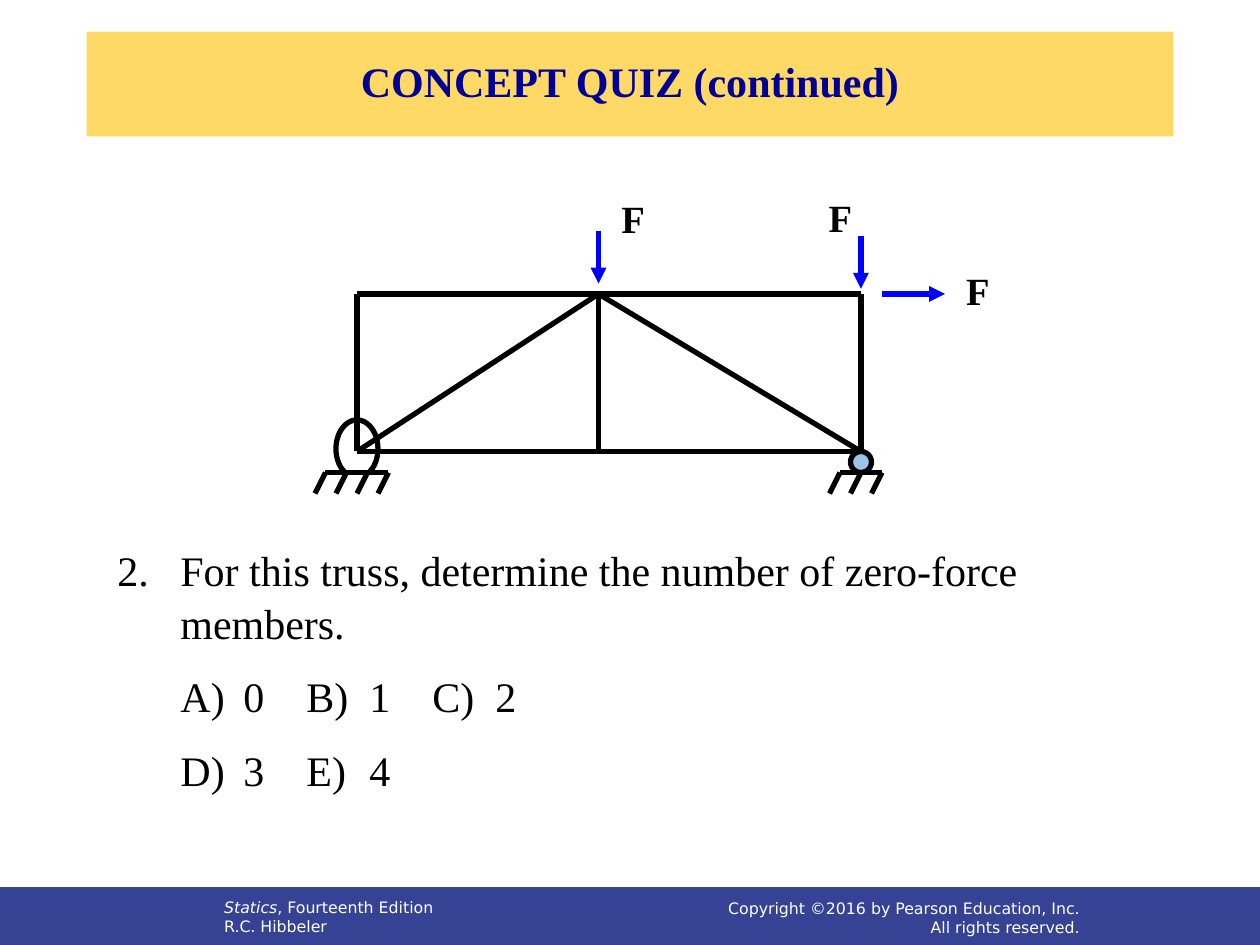
from typing import NamedTuple

from lxml.etree import SubElement
from pptx import Presentation
from pptx.dml.color import RGBColor
from pptx.enum.shapes import MSO_CONNECTOR, MSO_SHAPE
from pptx.enum.text import MSO_ANCHOR, PP_ALIGN
from pptx.oxml.ns import qn
from pptx.util import Pt

COLORS = {
    "black": "000000",
    "white": "FFFFFF",
    "force": "0000FF",
    "roller": "9DC3E6",
    "title": "000096",
    "title_band": "FFD966",
    "footer_band": "364395",
}
SERIF = "Times New Roman"
SANS = "DejaVu Sans"
LINE_WIDTH = 3
LEFT, MIDDLE, RIGHT = 204, 342, 492
TOP, BOTTOM, GROUND = 168, 258, 270
HATCH_GAP = 12


class Box(NamedTuple):
    left: float
    top: float
    width: float
    height: float


class Line(NamedTuple):
    x1: float
    y1: float
    x2: float
    y2: float


class Force(NamedTuple):
    arrow: Line
    label: Box


class Support(NamedTuple):
    left: float
    right: float


class Answers(NamedTuple):
    text: str


MEMBERS = [
    Line(LEFT, TOP, RIGHT, TOP),
    Line(LEFT, BOTTOM, RIGHT, BOTTOM),
    Line(LEFT, BOTTOM, LEFT, TOP),
    Line(MIDDLE, TOP, MIDDLE, BOTTOM),
    Line(RIGHT, TOP, RIGHT, BOTTOM + 6),
    Line(MIDDLE, TOP, LEFT, BOTTOM),
    Line(MIDDLE, TOP, RIGHT, BOTTOM),
]
FORCES = [
    Force(Line(MIDDLE, 132, MIDDLE, 162), Box(348, 108, 28, 34)),
    Force(Line(RIGHT, 135, RIGHT, 165), Box(466.5, 107.5, 28, 34)),
    Force(Line(504, TOP, 540, TOP), Box(545, 149, 28, 34)),
]
SUPPORTS = [Support(186, 222), Support(480, 504)]
ANSWERS = [Answers("A)\t0\tB)\t1\tC)\t2"), Answers("D)\t3\tE)\t4")]
ANSWER_TABS = [72, 216, 258, 432, 474]


def color(name: str) -> RGBColor:
    return RGBColor.from_string(COLORS[name])


def add_preset(slide, kind, box: Box, fill=None, line=None, width=LINE_WIDTH):
    shape = slide.shapes.add_shape(kind, *map(Pt, box))
    shape.shadow.inherit = False
    if fill:
        shape.fill.solid()
        shape.fill.fore_color.rgb = color(fill)
    else:
        shape.fill.background()
    if line:
        shape.line.color.rgb = color(line)
        shape.line.width = Pt(width)
    else:
        shape.line.fill.background()
    return shape


def add_line(slide, line: Line, line_color: str = "black", arrow: bool = False) -> None:
    connector = slide.shapes.add_connector(MSO_CONNECTOR.STRAIGHT, *map(Pt, line))
    connector.line.color.rgb = color(line_color)
    connector.line.width = Pt(LINE_WIDTH)
    if arrow:
        SubElement(connector.line._get_or_add_ln(), qn("a:tailEnd"), type="triangle")
    SubElement(connector._element.spPr, qn("a:effectLst"))


def add_text_frame(slide, box: Box, wrap: bool = True):
    frame = slide.shapes.add_textbox(*map(Pt, box)).text_frame
    frame.word_wrap = wrap
    return frame


def style(paragraph, size, name: str, font_color: str, bold: bool = False) -> None:
    font = paragraph.font
    font.size = Pt(size)
    font.name = name
    font.bold = bold
    font.color.rgb = color(font_color)


def add_support(slide, support: Support) -> None:
    add_line(slide, Line(support.left, GROUND, support.right, GROUND))
    for x in range(support.left, support.right + 1, HATCH_GAP):
        add_line(slide, Line(x, GROUND, x - 6, GROUND + 12))


def add_force(slide, force: Force) -> None:
    add_line(slide, force.arrow, "force", arrow=True)
    paragraph = add_text_frame(slide, force.label, wrap=False).paragraphs[0]
    paragraph.text = "F"
    style(paragraph, 22, SERIF, "black", bold=True)


def add_truss(slide) -> None:
    for member in MEMBERS:
        add_line(slide, member)
    add_preset(slide, MSO_SHAPE.FLOWCHART_CONNECTOR,
               Box(RIGHT - 6, BOTTOM, 12, 12), "roller", "black")
    pin = add_preset(slide, MSO_SHAPE.ARC, Box(LEFT - 12, 240, 24, 33), line="black")
    for index, degrees in enumerate((117, 63)):
        pin.adjustments[index] = degrees * 0.6
    for support in SUPPORTS:
        add_support(slide, support)
    for force in FORCES:
        add_force(slide, force)


def set_indent(paragraph, margin: float, indent: float, tabs: list[float]) -> None:
    properties = paragraph._p.get_or_add_pPr()
    properties.set("marL", str(Pt(margin)))
    properties.set("indent", str(Pt(indent)))
    if tabs:
        tab_list = SubElement(properties, qn("a:tabLst"))
        for position in tabs:
            SubElement(tab_list, qn("a:tab"), pos=str(Pt(position)), algn="l")


def add_question(slide) -> None:
    frame = add_text_frame(slide, Box(60, 306, 588, 151))
    question = frame.paragraphs[0]
    question.text = "2.\tFor this truss, determine the number of zero-force members."
    set_indent(question, 36, -36, [])
    for answers in ANSWERS:
        paragraph = frame.add_paragraph()
        paragraph.text = answers.text
        set_indent(paragraph, 0, 36, ANSWER_TABS)
        paragraph.space_before = Pt(12)
    for paragraph in frame.paragraphs:
        paragraph.line_spacing = 1.05
        style(paragraph, 24, SERIF, "black")


def add_title(slide) -> None:
    band = add_preset(slide, MSO_SHAPE.RECTANGLE, Box(49.5, 18, 621, 60), "title_band")
    band.text_frame.vertical_anchor = MSO_ANCHOR.MIDDLE
    paragraph = band.text_frame.paragraphs[0]
    paragraph.text = "CONCEPT QUIZ (continued)"
    paragraph.alignment = PP_ALIGN.CENTER
    paragraph.line_spacing = 0.9
    style(paragraph, 24, SERIF, "title", bold=True)


def add_footer(slide) -> None:
    add_preset(slide, MSO_SHAPE.RECTANGLE, Box(-0.5, 507, 721, 33.5),
               "footer_band", "footer_band", 0.5)
    book = add_text_frame(slide, Box(121, 509.5, 443.5, 29))
    book.paragraphs[0].add_run().text = "Statics"
    book.paragraphs[0].runs[0].font.italic = True
    book.paragraphs[0].add_run().text = ", Fourteenth Edition"
    book.add_paragraph().text = "R.C. Hibbeler"
    rights = add_text_frame(slide, Box(336, 509, 288, 31))
    rights.vertical_anchor = MSO_ANCHOR.MIDDLE
    rights.text = "Copyright ©2016 by Pearson Education, Inc.\nAll rights reserved."
    for paragraph in rights.paragraphs:
        paragraph.alignment = PP_ALIGN.RIGHT
    for paragraph in (*book.paragraphs, *rights.paragraphs):
        style(paragraph, 9, SANS, "white")


def main() -> None:
    presentation = Presentation()
    presentation.slide_width, presentation.slide_height = Pt(720), Pt(540)
    slide = presentation.slides.add_slide(presentation.slide_layouts[6])
    add_footer(slide)
    add_truss(slide)
    add_question(slide)
    add_title(slide)
    presentation.save("out.pptx")


if __name__ == "__main__":
    main()
